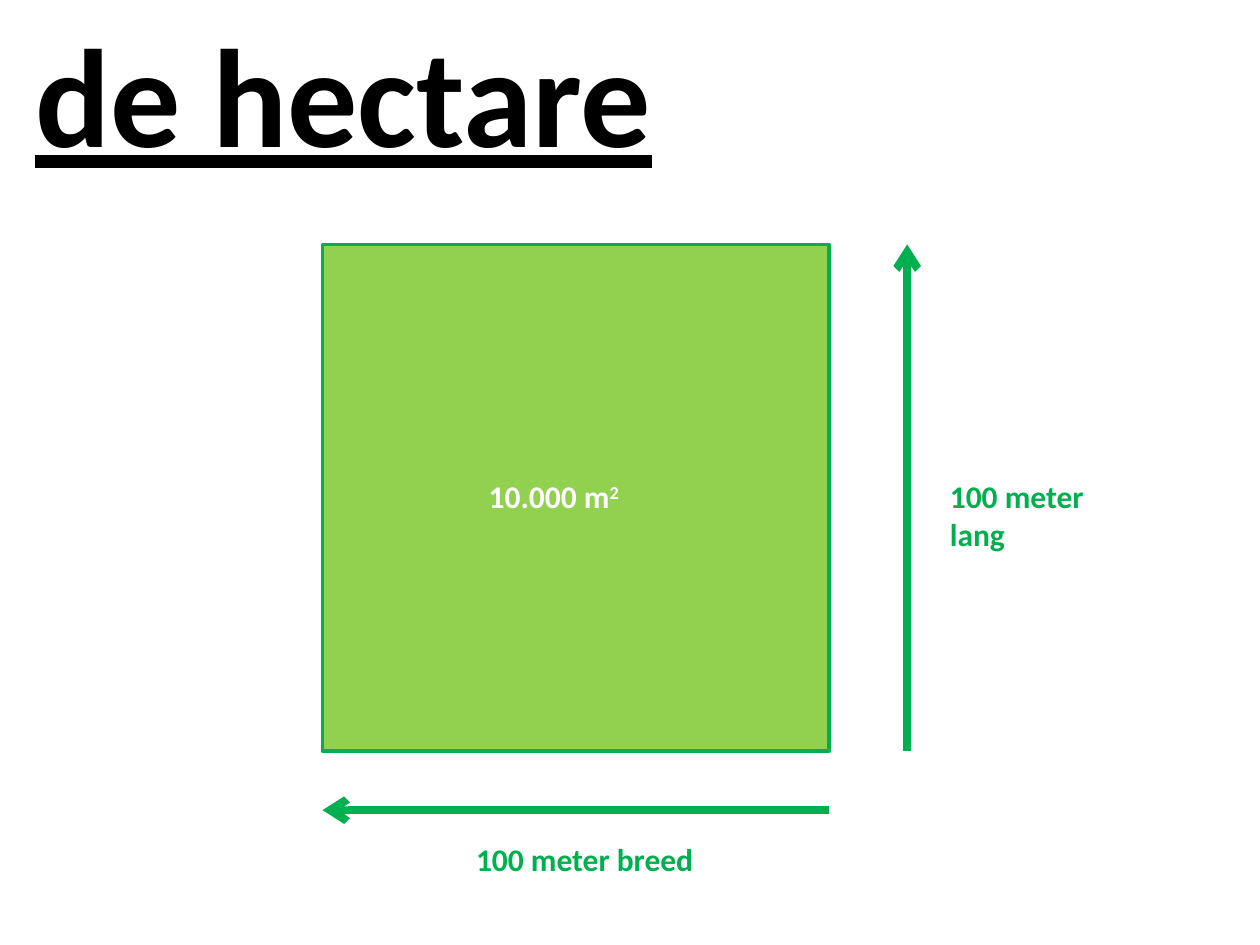
from lxml.etree import SubElement
from pptx import Presentation
from pptx.dml.color import RGBColor
from pptx.enum.shapes import MSO_CONNECTOR as Connector, MSO_SHAPE as Preset
from pptx.enum.text import MSO_AUTO_SIZE as AutoSize
from pptx.oxml.ns import qn
from pptx.util import Pt

SCALE = 9144
COLOURS = {"text": "000000", "field": "92D050", "measure": "00B050", "area": "FFFFFF"}
TITLE_FORMAT = {"name": "Calibri", "size": Pt(80), "bold": True, "underline": True}
LABEL_FORMAT = {"name": "Calibri", "size": Pt(18), "bold": True}


def px(length):
    """Turn whole px into EMU."""
    return length * SCALE


def colour(name):
    """Look up a named colour."""
    return RGBColor.from_string(COLOURS[name])


def add_run(paragraph, text, formats, colour_name):
    """Append a formatted run to a paragraph."""
    run = paragraph.add_run()
    run.text = text
    for attribute, value in formats.items():
        setattr(run.font, attribute, value)
    run.font.color.rgb = colour(colour_name)
    return run


def add_text(slide, box, text, formats, colour_name, wrap=False):
    """Add a text box and return its paragraph."""
    frame = slide.shapes.add_textbox(*map(px, box)).text_frame
    frame.word_wrap = wrap
    frame.auto_size = AutoSize.SHAPE_TO_FIT_TEXT
    paragraph = frame.paragraphs[0]
    add_run(paragraph, text, formats, colour_name)
    return paragraph


def add_arrow(slide, start, end):
    """Draw a measuring arrow from start to end."""
    arrow = slide.shapes.add_connector(Connector.STRAIGHT, *map(px, start + end))
    arrow.line.color.rgb = colour("measure")
    arrow.line.width = Pt(4.5)
    SubElement(arrow.line._get_or_add_ln(), qn("a:tailEnd"), type="arrow")
    SubElement(arrow._element.spPr, qn("a:effectLst"))


def add_field(slide, left, top, side):
    """Draw the square field with its area."""
    field = slide.shapes.add_shape(Preset.RECTANGLE, *map(px, (left, top, side, side)))
    field.shadow.inherit = False
    field.fill.solid()
    field.fill.fore_color.rgb = colour("field")
    field.line.color.rgb = colour("measure")
    field.line.width = Pt(2)
    area_box = (left + 122, top + 180, 157, 40)
    paragraph = add_text(slide, area_box, "10.000 m", LABEL_FORMAT, "area", wrap=True)
    exponent = add_run(paragraph, "2", LABEL_FORMAT, "area")
    exponent.font._element.set("baseline", "30000")


def add_measures(slide, left, top, side):
    """Draw the length and width arrows with their labels."""
    right, bottom = left + side, top + side
    add_arrow(slide, (right + 62, bottom), (right + 62, top))
    add_arrow(slide, (right, bottom + 47), (left, bottom + 47))
    labels = (
        ((right + 86, top + 180, 175, 40), "100 meter lang"),
        ((left + 112, bottom + 66, 194, 40), "100 meter breed"),
    )
    for box, text in labels:
        add_text(slide, box, text, LABEL_FORMAT, "measure")


def main():
    """Build the hectare slide."""
    presentation = Presentation()
    presentation.slide_width, presentation.slide_height = px(1000), px(750)
    slide = presentation.slides.add_slide(presentation.slide_layouts[6])
    add_text(slide, (18, 1, 1028, 145), "de hectare", TITLE_FORMAT, "text", wrap=True)
    field_box = (256, 194, 402)
    add_field(slide, *field_box)
    add_measures(slide, *field_box)
    presentation.save("out.pptx")


if __name__ == "__main__":
    main()
